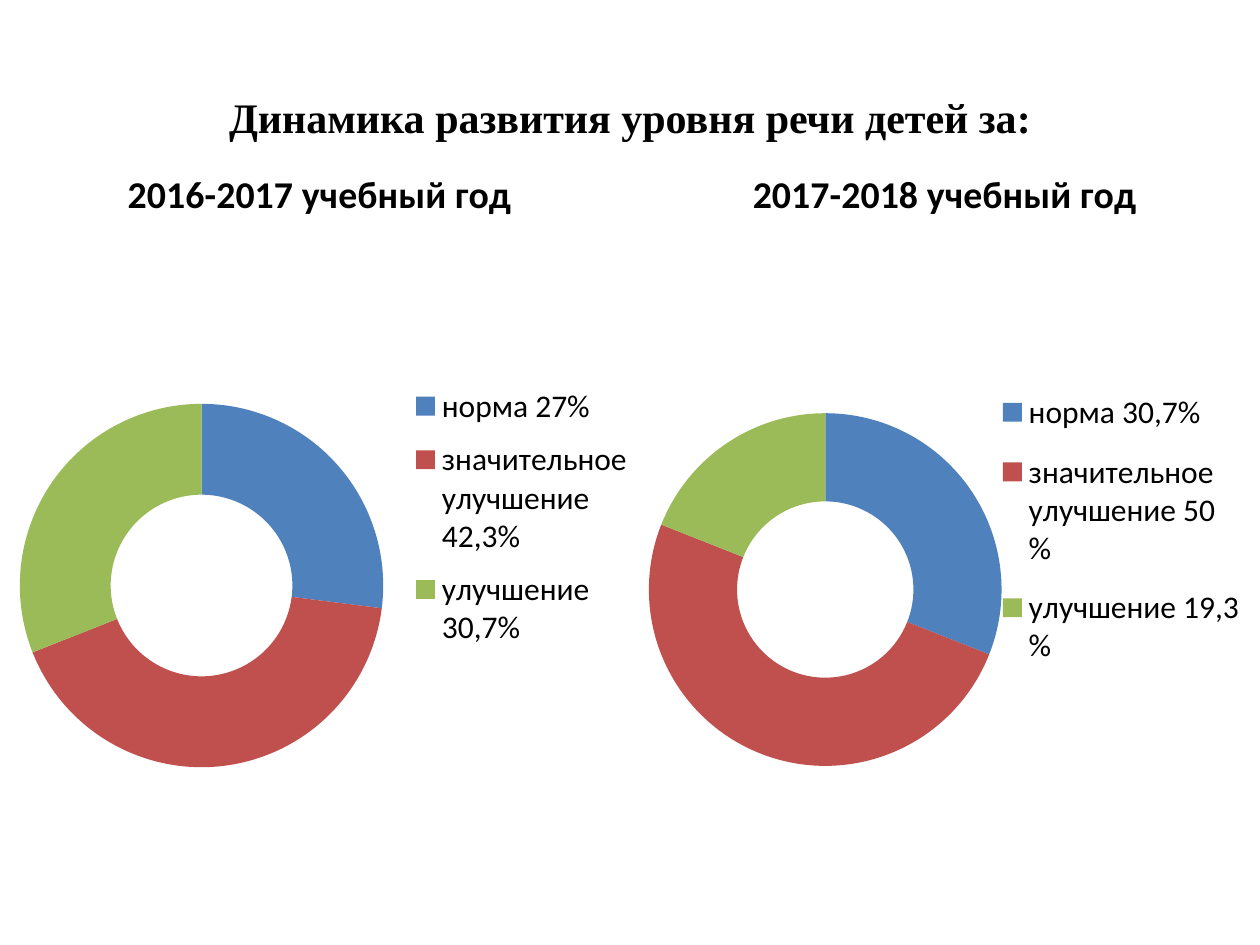
from dataclasses import dataclass

from lxml import etree
from pptx import Presentation
from pptx.chart.data import CategoryChartData
from pptx.dml.color import RGBColor
from pptx.enum.chart import XL_CHART_TYPE, XL_LEGEND_POSITION
from pptx.enum.text import MSO_ANCHOR, PP_ALIGN
from pptx.oxml.ns import qn
from pptx.util import Cm, Pt

RING = XL_CHART_TYPE.DOUGHNUT
RIGHT = XL_LEGEND_POSITION.RIGHT
MIDDLE = MSO_ANCHOR.MIDDLE
CENTER = PP_ALIGN.CENTER

BLACK = RGBColor(0x00, 0x00, 0x00)
BLUE = RGBColor(0x4F, 0x81, 0xBD)
RED = RGBColor(0xC0, 0x50, 0x4D)
GREEN = RGBColor(0x9B, 0xBB, 0x59)
HUES = (BLUE, RED, GREEN)

HEAD = {"name": "Times New Roman", "size": Pt(24), "bold": True}
BODY = {"name": "Calibri", "size": Pt(18), "bold": False}
LABEL = {"name": "Calibri", "size": Pt(21.6), "bold": True}

Box = tuple[float, float, float, float]


@dataclass
class Year:
    name: str
    left: float
    width: float
    cats: tuple[str, ...]
    vals: tuple[int, ...]
    plot: Box
    key: Box


YEARS = (
    Year("2016-2017 учебный год", 0, 12.9,
         ("норма 27%", "значительное улучшение 42,3%", "улучшение 30,7%"),
         (27, 42, 31), (0.03, 0.33, 0.57, 0.45), (0.63, 0.29, 0.37, 0.36)),
    Year("2017-2018 учебный год", 12.7, 12.7,
         ("норма 30,7%", "значительное улучшение 50 %", "улучшение 19,3 %"),
         (31, 50, 19), (0.03, 0.34, 0.56, 0.44), (0.62, 0.29, 0.38, 0.39)),
)


def style(font, form: dict) -> None:
    for key, value in form.items():
        setattr(font, key, value)
    font.color.rgb = BLACK


def place(node, box: Box, index: int, inner: bool = False) -> None:
    for old in node.findall(qn("c:layout")):
        node.remove(old)
    layout = etree.Element(qn("c:layout"))
    manual = etree.SubElement(layout, qn("c:manualLayout"))
    parts = [("xMode", "edge"), ("yMode", "edge"), *zip("xywh", box)]
    if inner:
        parts.insert(0, ("layoutTarget", "inner"))
    for tag, value in parts:
        etree.SubElement(manual, qn(f"c:{tag}")).set("val", str(value))
    node.insert(index, layout)


def draw(slide, year: Year) -> None:
    data = CategoryChartData()
    data.categories = year.cats
    data.add_series(year.name, year.vals)
    chart = slide.shapes.add_chart(
        RING, Cm(year.left), Cm(2.77), Cm(year.width), Cm(16.28), data).chart
    style(chart.font, BODY)

    chart.has_title = True
    text = chart.chart_title.text_frame
    text.text = year.name
    style(text.paragraphs[0].runs[0].font, LABEL)
    chart.chart_title.include_in_layout = False

    chart.has_legend = True
    legend = chart.legend
    legend.position = RIGHT
    legend.include_in_layout = False
    style(legend.font, BODY)
    place(legend._element, year.key, 1)

    plot = chart.plots[0]
    plot.vary_by_categories = True
    place(plot._element.getparent(), year.plot, 0, True)
    for i, hue in enumerate(HUES):
        fill = plot.series[0].points[i].format.fill
        fill.solid()
        fill.fore_color.rgb = hue


def main() -> None:
    deck = Presentation()
    deck.slide_width, deck.slide_height = Cm(25.4), Cm(19.05)
    slide = deck.slides.add_slide(deck.slide_layouts[5])
    title = slide.shapes.title
    title.left, title.top = Cm(1.27), Cm(0.76)
    title.width, title.height = Cm(22.86), Cm(3.18)
    frame = title.text_frame
    frame.text = "Динамика развития уровня речи детей за:"
    frame.vertical_anchor = MIDDLE
    line = frame.paragraphs[0]
    line.alignment = CENTER
    style(line.runs[0].font, HEAD)
    for year in YEARS:
        draw(slide, year)
    deck.save("out.pptx")


if __name__ == "__main__":
    main()
